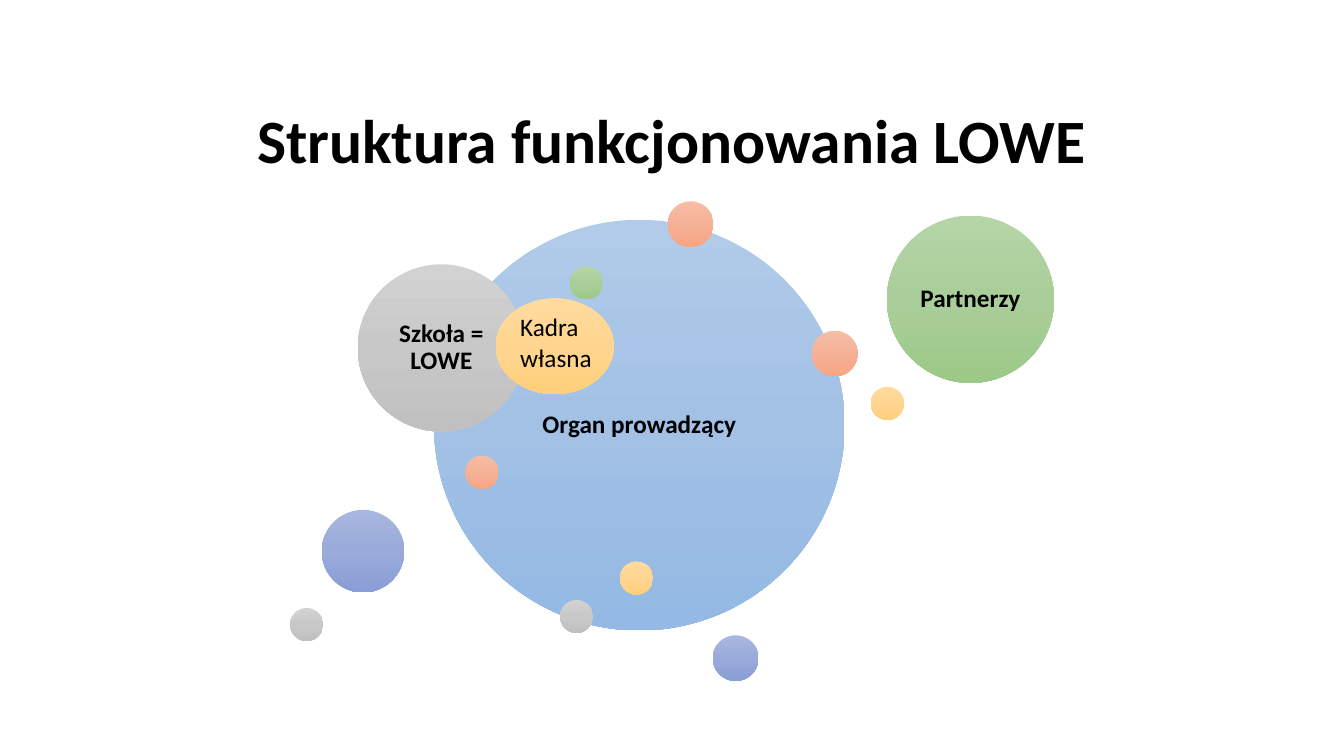
from copy import deepcopy

from pptx import Presentation
from pptx.dml.color import RGBColor
from pptx.enum.shapes import MSO_SHAPE as Shape
from pptx.enum.text import MSO_ANCHOR as Anchor, PP_ALIGN as Align
from pptx.oxml.ns import qn
from pptx.util import Pt

TITLE = "Struktura funkcjonowania LOWE"
FONT = "Calibri"
TEXT_COLOUR = "000000"
GRADIENTS = {
    "blue": ("B1CBE9", "A3C1E5", "93B9E4"),
    "orange": ("F7BDA5", "F5B196", "F8A582"),
    "grey": ("D2D2D2", "C8C8C8", "C0C0C0"),
    "yellow": ("FFDB9E", "FFD590", "FFD07C"),
    "indigo": ("A8B7DF", "9AABD9", "889ED7"),
    "green": ("B5D5A7", "AACE9A", "9CC987"),
}
# Width and height of each kind of bubble, in points
SIZES = {
    "main": (293.3, 293.3),
    "partner": (119.5, 119.5),
    "staff": (84.5, 68.5),
    "medium": (59, 59),
    "small": (32.6, 32.6),
    "dot": (23.7, 23.7),
}
# Left, top, size, colour, label; from back to front
BUBBLES = [
    (310, 157, "main", "blue", "Organ prowadzący"),
    (477, 143.8, "small", "orange", ""),
    (400, 428.5, "dot", "grey", ""),
    (622, 276.3, "dot", "yellow", ""),
    (509.2, 453.8, "small", "indigo", ""),
    (407, 190.2, "dot", "green", ""),
    (332.5, 325.5, "dot", "orange", ""),
    (255.5, 188.8, "partner", "grey", "Szkoła = LOWE"),
    (354, 213, "staff", "yellow", ""),
    (229.8, 364.2, "medium", "indigo", ""),
    (633.5, 154, "partner", "green", "Partnerzy"),
    (580, 236.2, "small", "orange", ""),
    (207.2, 434.3, "dot", "grey", ""),
    (442.8, 401, "dot", "yellow", ""),
]
STAFF_LABEL = "Kadra własna"


def write(frame, text, size, bold, align, spacing):
    frame.word_wrap = True
    para = frame.paragraphs[0]
    para.alignment = align
    para.line_spacing = spacing
    span = para.add_run()
    span.text = text
    span.font.name = FONT
    span.font.size = Pt(size)
    span.font.bold = bold
    span.font.color.rgb = RGBColor.from_string(TEXT_COLOUR)


def fill_gradient(shape, colours):
    """Fill from top to bottom with three evenly spaced colours."""
    shape.fill.gradient()
    shape.fill.gradient_angle = 270
    first = next(shape._element.iter(qn("a:gs")))
    first.addnext(deepcopy(first))
    for index, (stop, colour) in enumerate(zip(shape.fill.gradient_stops, colours)):
        stop.position = index / 2
        stop.color.rgb = RGBColor.from_string(colour)


def add_bubble(page, left, top, size, colour, label):
    width, height = SIZES[size]
    bubble = page.shapes.add_shape(
        Shape.OVAL, Pt(left), Pt(top), Pt(width), Pt(height))
    bubble.shadow.inherit = False
    bubble.line.fill.background()
    fill_gradient(bubble, GRADIENTS[colour])
    if label:
        frame = bubble.text_frame
        frame.margin_left = frame.margin_right = Pt(5)
        frame.margin_top = frame.margin_bottom = Pt(5)
        frame.vertical_anchor = Anchor.MIDDLE
        write(frame, label, 18, True, Align.CENTER, 0.9)


def main():
    deck = Presentation()
    deck.slide_width, deck.slide_height = Pt(960), Pt(540)
    page = deck.slides.add_slide(deck.slide_layouts[5])

    title = page.shapes.title
    title.left, title.top, title.width, title.height = Pt(66), Pt(72), Pt(828), Pt(61)
    title.text_frame.vertical_anchor = Anchor.MIDDLE
    write(title.text_frame, TITLE, 44, True, Align.CENTER, 0.9)

    for bubble in BUBBLES:
        add_bubble(page, *bubble)

    box = page.shapes.add_textbox(Pt(364.5), Pt(219), Pt(76.5), Pt(51))
    write(box.text_frame, STAFF_LABEL, 18, False, Align.LEFT, 1.0)

    deck.save("out.pptx")


if __name__ == "__main__":
    main()
